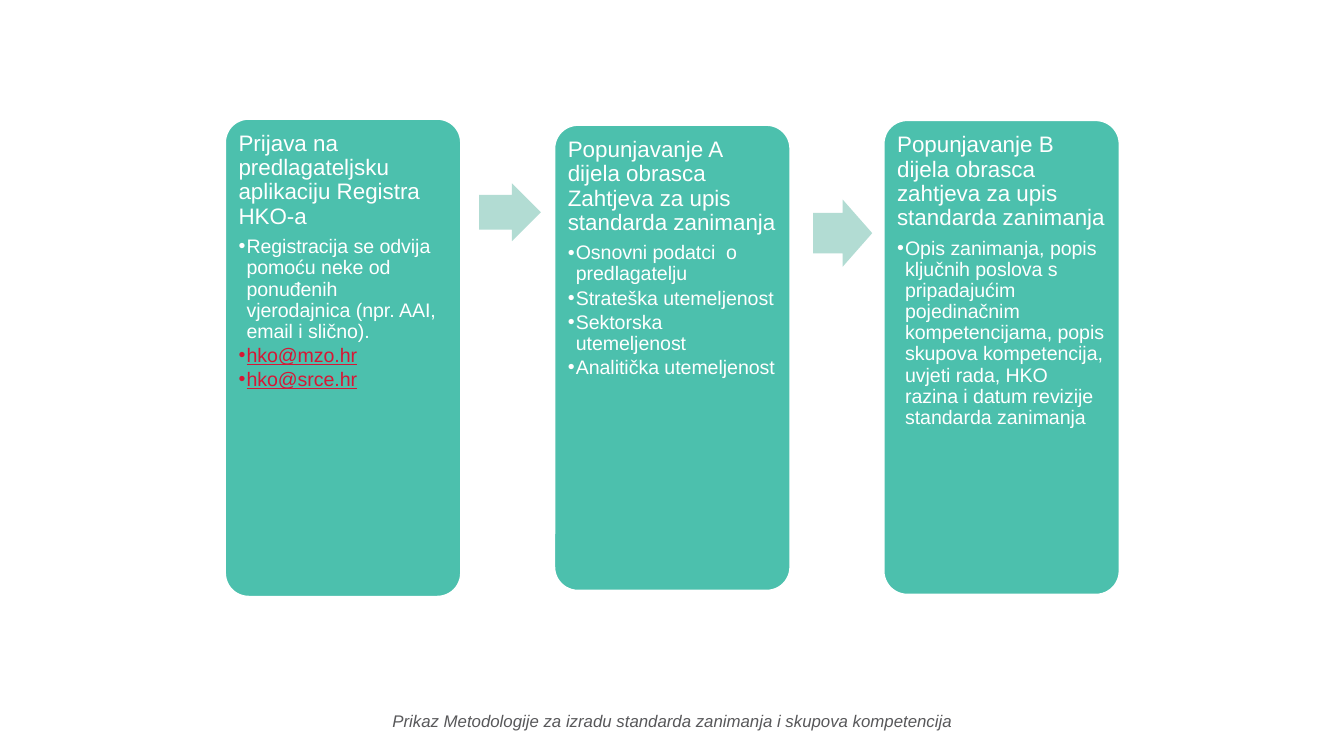
from lxml.etree import SubElement
from pptx import Presentation
from pptx.dml.color import RGBColor
from pptx.enum.shapes import MSO_SHAPE
from pptx.enum.text import MSO_ANCHOR, PP_ALIGN
from pptx.oxml.ns import qn
from pptx.util import Pt

PX = 4572
TEAL = RGBColor(0x4C, 0xC0, 0xAD)
MINT = RGBColor(0xB2, 0xDC, 0xD3)
WHITE = RGBColor(0xFF, 0xFF, 0xFF)
RED = RGBColor(0xD7, 0x16, 0x35)
GRAY = RGBColor(0x58, 0x58, 0x5A)

CARD_X, CARD_STEP, CARD_W = 335, 490, 351
INSET = 10
CARDS = [
    (177, 711, "Prijava na predlagateljsku aplikaciju Registra HKO-a",
     ["Registracija se odvija pomoću neke od ponuđenih \vvjerodajnica (npr. AAI, email i slično)."],
     ["hko@mzo.hr", "hko@srce.hr"]),
    (186, 693, "Popunjavanje A dijela obrasca Zahtjeva za upis standarda zanimanja",
     ["Osnovni podatci  o predlagatelju", "Strateška utemeljenost",
      "Sektorska utemeljenost", "Analitička utemeljenost"], []),
    (179, 706, "Popunjavanje B dijela obrasca zahtjeva za upis standarda zanimanja",
     ["Opis zanimanja, popis ključnih poslova s pripadajućim pojedinačnim "
      "kompetencijama, popis skupova kompetencija, uvjeti rada, HKO razina "
      "i datum revizije standarda zanimanja"], []),
]
ARROWS = [(713, 273, 92, 86), (1210, 297, 88, 100)]


def px(*vals):
    return [val * PX for val in vals]


def write(para, text, size=10.5, color=WHITE, align=PP_ALIGN.LEFT, after=0,
          lines=1.0, bullet=False, under=None, italic=None):
    para.alignment = align
    para.line_spacing = lines
    para.space_after = Pt(after)
    if bullet:
        para.level = 1
        props = para._p.get_or_add_pPr()
        props.set("marL", str(12 * PX))
        props.set("indent", str(-12 * PX))
        SubElement(props, qn("a:buFont"), typeface="Arial")
        SubElement(props, qn("a:buChar"), char="•")
    para.text = text
    for run in para.runs:
        font = run.font
        font.name = "Arial"
        font.size = Pt(size)
        font.color.rgb = color
        font.underline = under
        font.italic = italic


def add_block(slide, kind, box, fill):
    block = slide.shapes.add_shape(kind, *px(*box))
    block.shadow.inherit = False
    block.fill.solid()
    block.fill.fore_color.rgb = fill
    block.line.fill.background()
    return block


def add_frame(slide, box, anchor):
    frame = slide.shapes.add_textbox(*px(*box)).text_frame
    frame.word_wrap = True
    frame.vertical_anchor = anchor
    return frame


def add_card(slide, box, title, points, mails):
    card = add_block(slide, MSO_SHAPE.ROUNDED_RECTANGLE, box, TEAL)
    card.adjustments[0] = 0.1
    card.line.color.rgb = WHITE
    card.line.width = Pt(1)
    left, top, wide, high = box
    inner = (left + INSET, top + INSET, wide - 2 * INSET, high - 2 * INSET)
    frame = add_frame(slide, inner, MSO_ANCHOR.TOP)
    frame.margin_left = frame.margin_right = INSET * PX
    frame.margin_top = frame.margin_bottom = INSET * PX
    write(frame.paragraphs[0], title, size=12, after=4.2, lines=0.9)
    for text in points:
        write(frame.add_paragraph(), text, after=1.6, lines=0.9, bullet=True)
    for mail in mails:
        write(frame.add_paragraph(), mail, after=1.6, lines=0.9, bullet=True,
              color=RED, under=True)


def add_arrow(slide, box):
    arrow = add_block(slide, MSO_SHAPE.RIGHT_ARROW, box, MINT)
    arrow.adjustments[0] = 0.6
    arrow.adjustments[1] = 0.5


def add_note(slide, box, text):
    frame = add_frame(slide, box, MSO_ANCHOR.MIDDLE)
    write(frame.paragraphs[0], text, size=9, color=GRAY,
          align=PP_ALIGN.CENTER, italic=True)


def main():
    deck = Presentation()
    deck.slide_width, deck.slide_height = px(2000, 1125)
    slide = deck.slides.add_slide(deck.slide_layouts[6])
    add_note(slide, (451, 1043, 1098, 60),
             "Prikaz Metodologije za izradu standarda zanimanja i skupova kompetencija")
    for col, (top, high, title, points, mails) in enumerate(CARDS):
        box = (CARD_X + col * CARD_STEP, top, CARD_W, high)
        add_card(slide, box, title, points, mails)
    for box in ARROWS:
        add_arrow(slide, box)
    deck.save("out.pptx")


if __name__ == "__main__":
    main()
